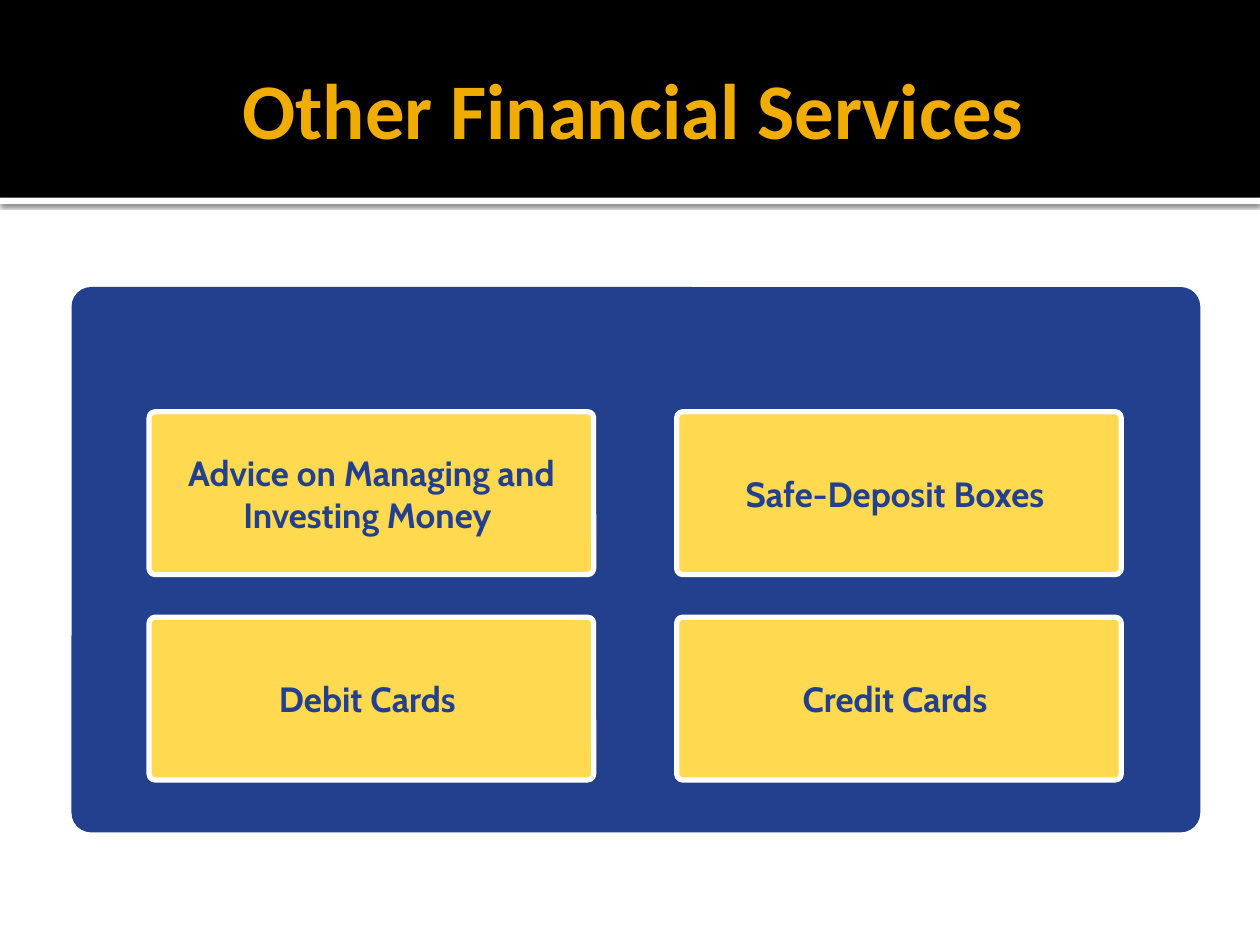
from dataclasses import dataclass
from typing import Optional

from lxml.etree import SubElement
from pptx import Presentation
from pptx.dml.color import RGBColor
from pptx.enum.shapes import MSO_SHAPE
from pptx.enum.text import MSO_ANCHOR, MSO_AUTO_SIZE, PP_ALIGN
from pptx.oxml.ns import qn
from pptx.shapes.autoshape import Shape
from pptx.slide import Slide
from pptx.util import Pt

BLACK, WHITE = "000000", "FFFFFF"
NAVY, YELLOW, GOLD = "23408F", "FFD94F", "F0AD00"
CORNER = 0.036
COLUMNS = 2
SERVICES = [
    "Advice on Managing and Investing Money ",
    "Safe-Deposit Boxes ",
    "Debit Cards ",
    "Credit Cards ",
]


@dataclass
class Box:
    left: float
    top: float
    width: float
    height: float
    fill: str
    line: Optional[str] = None
    rounded: bool = False


def color(value: str) -> RGBColor:
    return RGBColor.from_string(value)


def draw_box(slide: Slide, box: Box) -> Shape:
    kind = MSO_SHAPE.ROUNDED_RECTANGLE if box.rounded else MSO_SHAPE.RECTANGLE
    shape = slide.shapes.add_shape(
        kind, Pt(box.left), Pt(box.top), Pt(box.width), Pt(box.height)
    )
    shape.shadow.inherit = False
    shape.fill.solid()
    shape.fill.fore_color.rgb = color(box.fill)
    if box.rounded:
        shape.adjustments[0] = CORNER
    if box.line:
        shape.line.color.rgb = color(box.line)
        shape.line.width = Pt(3)
    else:
        shape.line.fill.background()
    return shape


def write_text(shape: Shape, text: str, font: str, size: float, ink: str) -> None:
    frame = shape.text_frame
    frame.text = text
    frame.word_wrap = True
    frame.auto_size = MSO_AUTO_SIZE.NONE
    frame.vertical_anchor = MSO_ANCHOR.MIDDLE
    para = frame.paragraphs[0]
    para.alignment = PP_ALIGN.CENTER
    para.font.name = font
    para.font.size = Pt(size)
    para.font.bold = True
    para.font.color.rgb = color(ink)


def add_shadow(shape: Shape) -> None:
    effects = shape.element.spPr.find(qn("a:effectLst"))
    shadow = SubElement(
        effects,
        qn("a:outerShdw"),
        blurRad=str(Pt(2.5)),
        dist=str(Pt(0.8)),
        dir="5400000",
        algn="t",
        rotWithShape="0",
    )
    ink = SubElement(shadow, qn("a:srgbClr"), val=BLACK)
    SubElement(ink, qn("a:alpha"), val="60000")


def draw_title(slide: Slide, text: str) -> None:
    title = slide.shapes.title
    title.left, title.top = Pt(36), Pt(12.2)
    title.width, title.height = Pt(648), Pt(98.6)
    write_text(title, text, "Calibri", 45, GOLD)
    frame = title.text_frame
    frame.margin_left = Pt(7.2)
    frame.margin_top = frame.margin_right = frame.margin_bottom = Pt(3.6)
    title.element.getparent().append(title.element)


def draw_services(slide: Slide) -> None:
    for index, service in enumerate(SERVICES):
        row, column = divmod(index, COLUMNS)
        card = Box(
            85.2 + column * 301.5, 235.3 + row * 117.4, 254, 93, YELLOW, WHITE, True
        )
        write_text(draw_box(slide, card), service, "Cabin", 20, NAVY)


def main() -> None:
    deck = Presentation()
    deck.slide_width, deck.slide_height = Pt(720), Pt(540)
    page = deck.slides.add_slide(deck.slide_layouts[5])
    add_shadow(draw_box(page, Box(0, 113, 720, 3.6, WHITE)))
    draw_box(page, Box(0, 0, 720, 113, BLACK))
    draw_title(page, "Other Financial Services")
    draw_box(page, Box(40.9, 164, 645, 311.6, NAVY, rounded=True))
    draw_services(page)
    deck.save("out.pptx")


if __name__ == "__main__":
    main()
